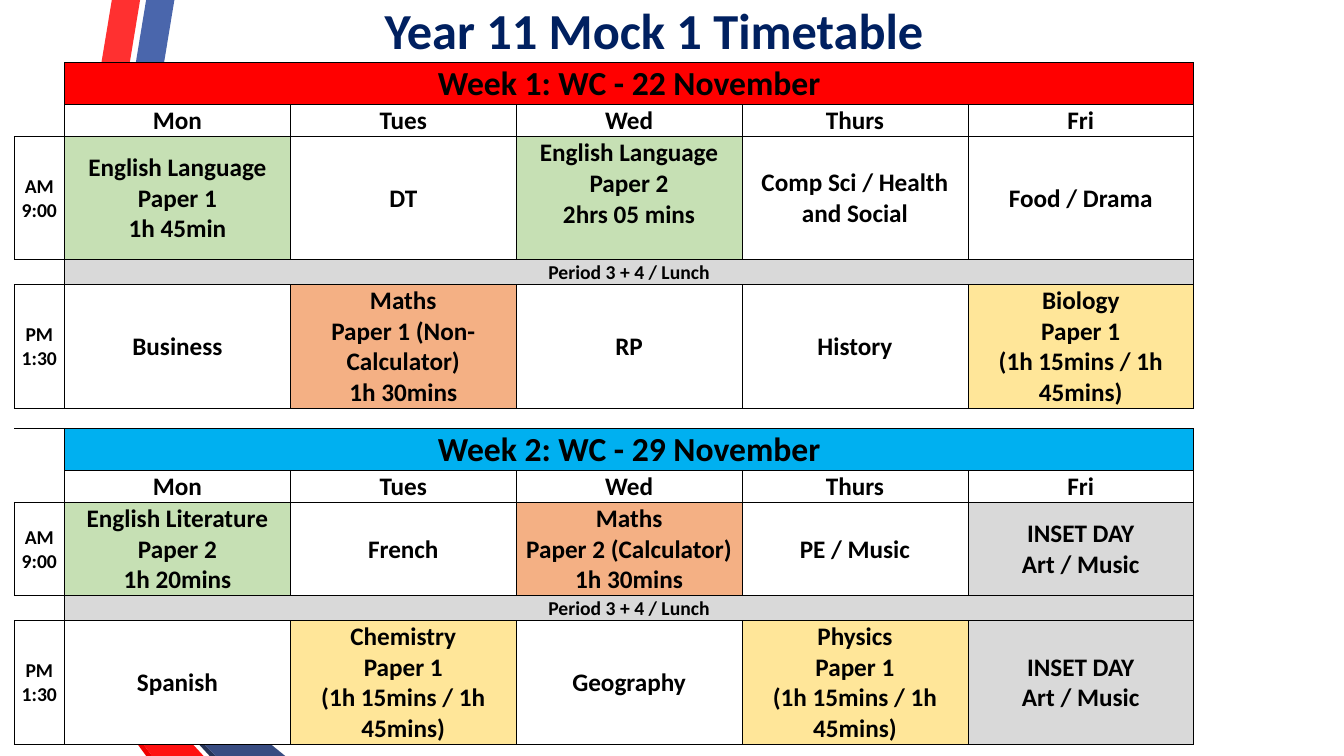
from dataclasses import dataclass
from typing import Optional
from lxml.etree import SubElement
from pptx import Presentation
from pptx.dml.color import RGBColor
from pptx.enum.text import MSO_ANCHOR, PP_ALIGN
from pptx.oxml.ns import qn
from pptx.util import Inches, Pt

BLACK = RGBColor(0x00, 0x00, 0x00)
WHITE = RGBColor(0xFF, 0xFF, 0xFF)
NAVY = RGBColor(0x00, 0x20, 0x60)
RED = RGBColor(0xFF, 0x00, 0x00)
BLUE = RGBColor(0x00, 0xB0, 0xF0)
GREEN = RGBColor(0xC6, 0xE0, 0xB4)
ORANGE = RGBColor(0xF4, 0xB0, 0x84)
YELLOW = RGBColor(0xFF, 0xE6, 0x99)
GREY = RGBColor(0xD9, 0xD9, 0xD9)
STEEL = RGBColor(0x4A, 0x66, 0xAC)
CORAL = RGBColor(0xFF, 0x30, 0x30)
CRIMSON = RGBColor(0xF0, 0x00, 0x00)
INK = RGBColor(0x25, 0x33, 0x56)
DENIM = RGBColor(0x38, 0x4C, 0x81)
SCARLET = RGBColor(0xFF, 0x11, 0x11)

FONT = "Calibri"
PLAIN = "{2D5ABB26-0587-4C30-8999-92F81FD0307C}"
UNIT = Inches(0.01)
LEADING = 1.22
SIDE, DAY = 0.5, 2.24
COLS = [SIDE] + [DAY] * 5


@dataclass
class Band:
    tint: RGBColor
    points: list[tuple[int, int]]


@dataclass
class Slot:
    text: str = ""
    tint: RGBColor = WHITE
    anchor: Optional[MSO_ANCHOR] = None


@dataclass
class Row:
    slots: list[Slot]
    size: int = 18
    lines: int = 1
    anchor: MSO_ANCHOR = MSO_ANCHOR.MIDDLE
    label: str = ""

    @property
    def height(self) -> int:
        return Pt(self.size * self.lines * LEADING)


BANDS = [
    Band(STEEL, [(50, 578), (77, 583), (173, 0), (145, 0)]),
    Band(CORAL, [(139, 0), (111, 0), (16, 573), (44, 577)]),
    Band(CRIMSON, [(16, 573), (145, 750), (151, 750)]),
    Band(INK, [(50, 579), (208, 750), (214, 750)]),
    Band(DENIM, [(50, 579), (214, 750), (283, 750), (77, 583), (50, 578)]),
    Band(SCARLET, [(202, 750), (48, 583), (43, 578), (44, 577), (16, 573), (151, 750)]),
]

DAYS = [Slot(day) for day in ("Mon", "Tues", "Wed", "Thurs", "Fri")]
INSET = Slot("INSET DAY\nArt / Music", GREY)


def science(name: str) -> Slot:
    return Slot(f"{name}\nPaper 1\n(1h 15mins / 1h 45mins)", YELLOW)


def week(name: str, tint: RGBColor, lines: int, morning: list[Slot], noon: list[Slot]) -> list[Row]:
    return [
        Row([Slot(name, tint)], 24, anchor=MSO_ANCHOR.BOTTOM),
        Row(DAYS, anchor=MSO_ANCHOR.BOTTOM),
        Row(morning, lines=lines, label="AM\n9:00"),
        Row([Slot("Period 3 + 4 / Lunch", GREY)], 14),
        Row(noon, lines=4, label="PM\n1:30"),
    ]


ROWS = [
    Row([Slot()] * 5, 36, anchor=MSO_ANCHOR.TOP, label="Year 11 Mock 1 Timetable"),
    *week("Week 1: WC - 22 November", RED, 4, [
        Slot("English Language\nPaper 1\n1h 45min", GREEN),
        Slot("DT"),
        Slot("English Language\nPaper 2\n2hrs 05 mins", GREEN, MSO_ANCHOR.TOP),
        Slot("Comp Sci / Health and Social"),
        Slot("Food / Drama"),
    ], [
        Slot("Business"),
        Slot("Maths\nPaper 1 (Non-Calculator)\n1h 30mins", ORANGE),
        Slot("RP"),
        Slot("History"),
        science("Biology"),
    ]),
    Row([Slot()] * 5, 11),
    *week("Week 2: WC - 29 November", BLUE, 3, [
        Slot("English Literature\nPaper 2\n1h 20mins", GREEN),
        Slot("French"),
        Slot("Maths\nPaper 2 (Calculator)\n1h 30mins", ORANGE),
        Slot("PE / Music"),
        INSET,
    ], [
        Slot("Spanish"),
        science("Chemistry"),
        Slot("Geography"),
        science("Physics"),
        INSET,
    ]),
]


def boxed(row: int, col: int) -> bool:
    if not 0 < row < len(ROWS) or not 0 <= col < len(COLS):
        return False
    if col == 0:
        return bool(ROWS[row].label)
    return bool(ROWS[row].slots[0].text)


def edge(cell, row: int, col: int) -> None:
    sides = {"L": (row, col - 1), "R": (row, col + 1), "T": (row - 1, col), "B": (row + 1, col)}
    props = cell._tc.get_or_add_tcPr()
    for side, near in sides.items():
        if boxed(row, col) or boxed(*near):
            line = SubElement(props, qn(f"a:ln{side}"), w=str(Pt(0.5)))
            fill = SubElement(line, qn("a:solidFill"))
            SubElement(fill, qn("a:srgbClr"), val=str(BLACK))


def write(cell, text: str, size: int, anchor: MSO_ANCHOR, tint: RGBColor = BLACK) -> None:
    cell.margin_left = cell.margin_right = cell.margin_top = UNIT
    cell.margin_bottom = 0
    cell.vertical_anchor = anchor
    para = cell.text_frame.paragraphs[0]
    para.text = text
    para.alignment = PP_ALIGN.CENTER
    font = para.font
    font.name, font.size, font.bold = FONT, Pt(size), True
    font.color.rgb = tint


def paint(cell, tint: RGBColor) -> None:
    cell.fill.solid()
    cell.fill.fore_color.rgb = tint


def draw_band(slide, band: Band) -> None:
    path = slide.shapes.build_freeform(*band.points[0], scale=UNIT)
    path.add_line_segments(band.points[1:], close=True)
    shape = path.convert_to_shape()
    shape.shadow.inherit = False
    shape.fill.solid()
    shape.fill.fore_color.rgb = band.tint
    shape.line.fill.background()


def draw_row(table, index: int, row: Row) -> None:
    table.rows[index].height = row.height
    size = 14 if row.label else row.size
    slots = [Slot(row.label)] + row.slots
    if len(row.slots) == 1:
        slots += [Slot(tint=row.slots[0].tint)] * 4
        table.cell(index, 1).merge(table.cell(index, 5))
    for col, slot in enumerate(slots):
        cell = table.cell(index, col)
        write(cell, slot.text, row.size if col else size, slot.anchor or row.anchor)
        edge(cell, index, col)
        paint(cell, slot.tint)


def draw_title(table, row: Row) -> None:
    table.rows[0].height = row.height
    cell = table.cell(0, 0)
    cell.merge(table.cell(0, 5))
    write(cell, row.label, row.size, row.anchor, NAVY)
    cell.margin_left = Inches(DAY * 0.45)
    cell.fill.background()


def draw_table(slide) -> None:
    high = sum(row.height for row in ROWS)
    frame = slide.shapes.add_table(len(ROWS), len(COLS), Inches(0.14), 0, Inches(sum(COLS)), high)
    table = frame.table
    table.first_row = table.horz_banding = False
    table._tbl.tblPr.find(qn("a:tableStyleId")).text = PLAIN
    for col, wide in zip(table.columns, COLS):
        col.width = Inches(wide)
    draw_title(table, ROWS[0])
    for index, row in enumerate(ROWS[1:], 1):
        draw_row(table, index, row)


def main() -> None:
    deck = Presentation()
    deck.slide_width, deck.slide_height = Inches(13.33), Inches(7.5)
    slide = deck.slides.add_slide(deck.slide_layouts[6])
    for band in BANDS:
        draw_band(slide, band)
    draw_table(slide)
    deck.save("out.pptx")


if __name__ == "__main__":
    main()
